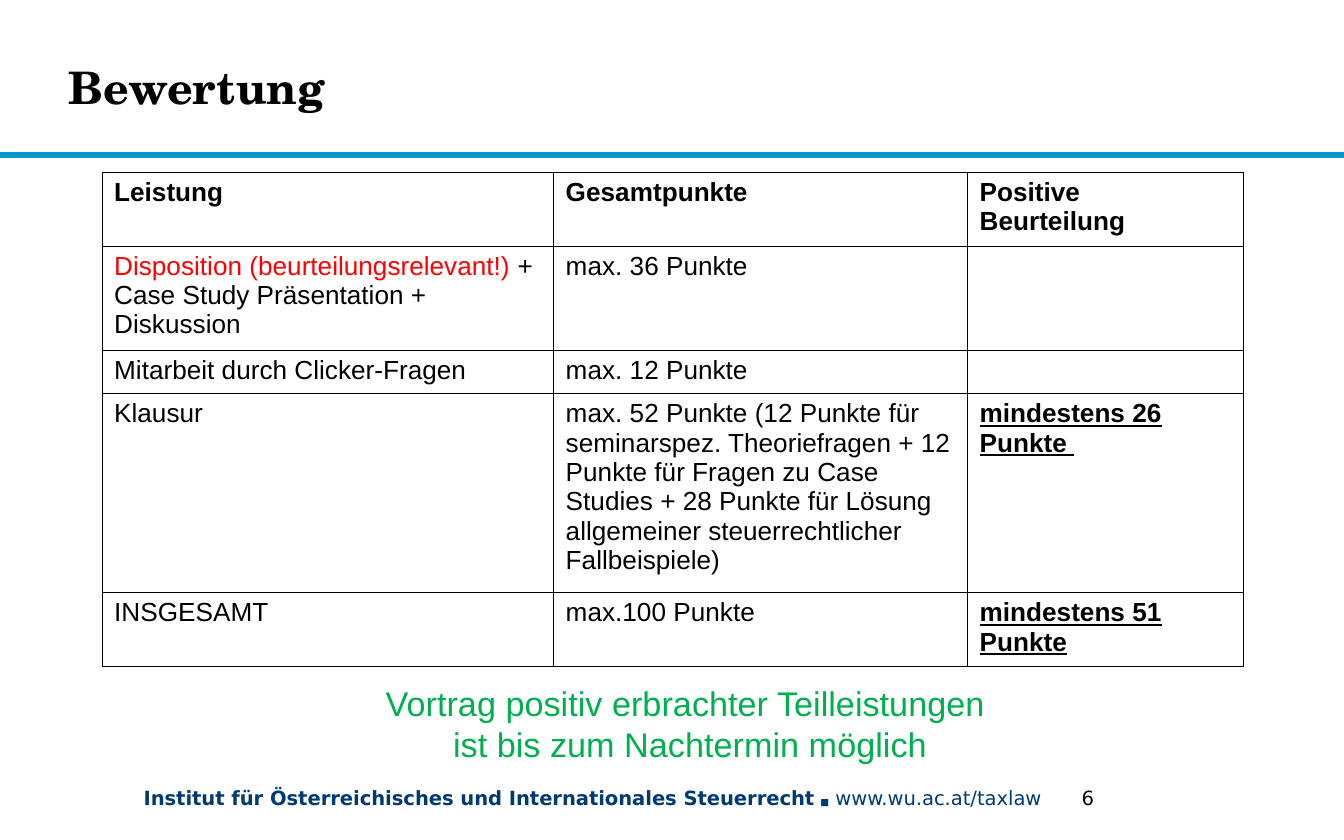
from typing import NamedTuple

from lxml.etree import SubElement
from pptx import Presentation
from pptx.dml.color import RGBColor
from pptx.enum.shapes import MSO_SHAPE
from pptx.enum.text import MSO_ANCHOR, PP_ALIGN
from pptx.oxml.ns import qn
from pptx.util import Inches, Pt

BLACK, RED, GREEN, NAVY = "000000", "FF0000", "00B050", "003A74"
SANS, BODY, SERIF = "DejaVu Sans", "Arial", "TeX Gyre Schola"


class Span(NamedTuple):
    text: str
    size: float = 14
    font: str = BODY
    color: str = BLACK
    bold: bool = False
    underline: bool = False


class Box(NamedTuple):
    left: float
    top: float
    width: float
    height: float


def rgb(hex_color: str) -> RGBColor:
    return RGBColor.from_string(hex_color)


def add_spans(paragraph, spans: list[Span]) -> None:
    for span in spans:
        run = paragraph.add_run()
        run.text = span.text
        font = run.font
        font.size, font.name, font.bold = Pt(span.size), span.font, span.bold
        font.underline = span.underline
        font.color.rgb = rgb(span.color)


def add_text(slide, box: Box, lines: list[list[Span]], align=PP_ALIGN.LEFT,
             anchor=MSO_ANCHOR.TOP, inset: bool = True) -> None:
    frame = slide.shapes.add_textbox(*map(Inches, box)).text_frame
    frame.word_wrap = True
    frame.vertical_anchor = anchor
    if not inset:
        frame.margin_left = frame.margin_right = 0
        frame.margin_top = frame.margin_bottom = 0
    for index, spans in enumerate(lines):
        paragraph = frame.add_paragraph() if index else frame.paragraphs[0]
        paragraph.alignment = align
        add_spans(paragraph, spans)


def add_borders(cell) -> None:
    """Draw thin black lines on all four sides; call before filling the cell."""
    properties = cell._tc.get_or_add_tcPr()
    for side in ("a:lnL", "a:lnR", "a:lnT", "a:lnB"):
        line = SubElement(properties, qn(side), w=str(Pt(0.5)))
        fill = SubElement(line, qn("a:solidFill"))
        SubElement(fill, qn("a:srgbClr"), val=BLACK)


def fill_cell(cell, spans: list[Span]) -> None:
    add_borders(cell)
    cell.fill.background()
    cell.margin_left = cell.margin_right = Inches(0.09)
    cell.margin_top = cell.margin_bottom = Inches(0.04)
    paragraph = cell.text_frame.paragraphs[0]
    add_spans(paragraph, spans)
    if not spans:
        # Keeps the empty line from stretching its row
        SubElement(paragraph._p, qn("a:endParaRPr"), sz="1400")


def add_grading_table(slide, left: float, top: float, columns: list[float],
                      row_heights: list[float], rows: list[list[list[Span]]]) -> None:
    box = Box(left, top, sum(columns), sum(row_heights))
    table = slide.shapes.add_table(len(rows), len(columns), *map(Inches, box)).table
    table.first_row = table.horz_banding = False
    for column, width in zip(table.columns, columns):
        column.width = Inches(width)
    for row, height, contents in zip(table.rows, row_heights, rows):
        row.height = Inches(height)
        for cell, spans in zip(row.cells, contents):
            fill_cell(cell, spans)


def header(text: str) -> list[Span]:
    return [Span(text, bold=True)]


def minimum(text: str) -> list[Span]:
    return [Span(text, bold=True, underline=True)]


GRADING = [
    [header("Leistung"), header("Gesamtpunkte"), header("Positive Beurteilung")],
    [[Span("Disposition (beurteilungsrelevant!)", color=RED),
      Span(" + Case Study Präsentation + Diskussion")],
     [Span("max. 36 Punkte")], []],
    [[Span("Mitarbeit durch Clicker-Fragen")], [Span("max. 12 Punkte")], []],
    [[Span("Klausur")],
     [Span("max. 52 Punkte (12 Punkte für seminarspez. Theoriefragen + 12 Punkte "
           "für Fragen zu Case Studies + 28 Punkte für Lösung allgemeiner "
           "steuerrechtlicher Fallbeispiele)")],
     minimum("mindestens 26 Punkte ")],
    [[Span("INSGESAMT")], [Span("max.100 Punkte")], minimum("mindestens 51 Punkte")],
]


def main() -> None:
    presentation = Presentation()
    presentation.slide_width, presentation.slide_height = Inches(10), Inches(6.25)
    slide = presentation.slides.add_slide(presentation.slide_layouts[6])

    rule = slide.shapes.add_shape(
        MSO_SHAPE.RECTANGLE, *map(Inches, Box(0, 1.14, 10, 0.03)))
    rule.shadow.inherit = False
    rule.fill.solid()
    rule.fill.fore_color.rgb = rgb("0C94B7")
    rule.line.color.rgb = rgb("0096D3")
    rule.line.width = Pt(1)

    add_text(slide, Box(0.51, 0.15, 7.48, 0.99),
             [[Span("Bewertung", 24, SERIF, bold=True)]],
             anchor=MSO_ANCHOR.MIDDLE, inset=False)
    add_grading_table(slide, 0.76, 1.28, [3.36, 3.08, 2.05],
                      [0.55, 0.78, 0.32, 1.48, 0.55], GRADING)
    add_text(slide, Box(1.13, 5.03, 8.01, 0.72),
             [[Span("Vortrag positiv erbrachter Teilleistungen ", 18.3, color=GREEN)],
              [Span("ist bis zum Nachtermin möglich", 18.3, color=GREEN)]],
             align=PP_ALIGN.CENTER)
    add_text(slide, Box(0.97, 5.8, 6.96, 0.28), [[
        Span("Institut für Österreichisches und Internationales Steuerrecht",
             10.5, SANS, NAVY, bold=True),
        Span(" ", 8, SANS, NAVY, bold=True),
        Span("■", 5, SANS, NAVY),
        Span(" www.wu.ac.at/taxlaw", 10.5, SANS, NAVY),
    ]])
    add_text(slide, Box(7.95, 5.8, 0.48, 0.28), [[Span("6", 10.5, SANS)]])

    presentation.save("out.pptx")


if __name__ == "__main__":
    main()
